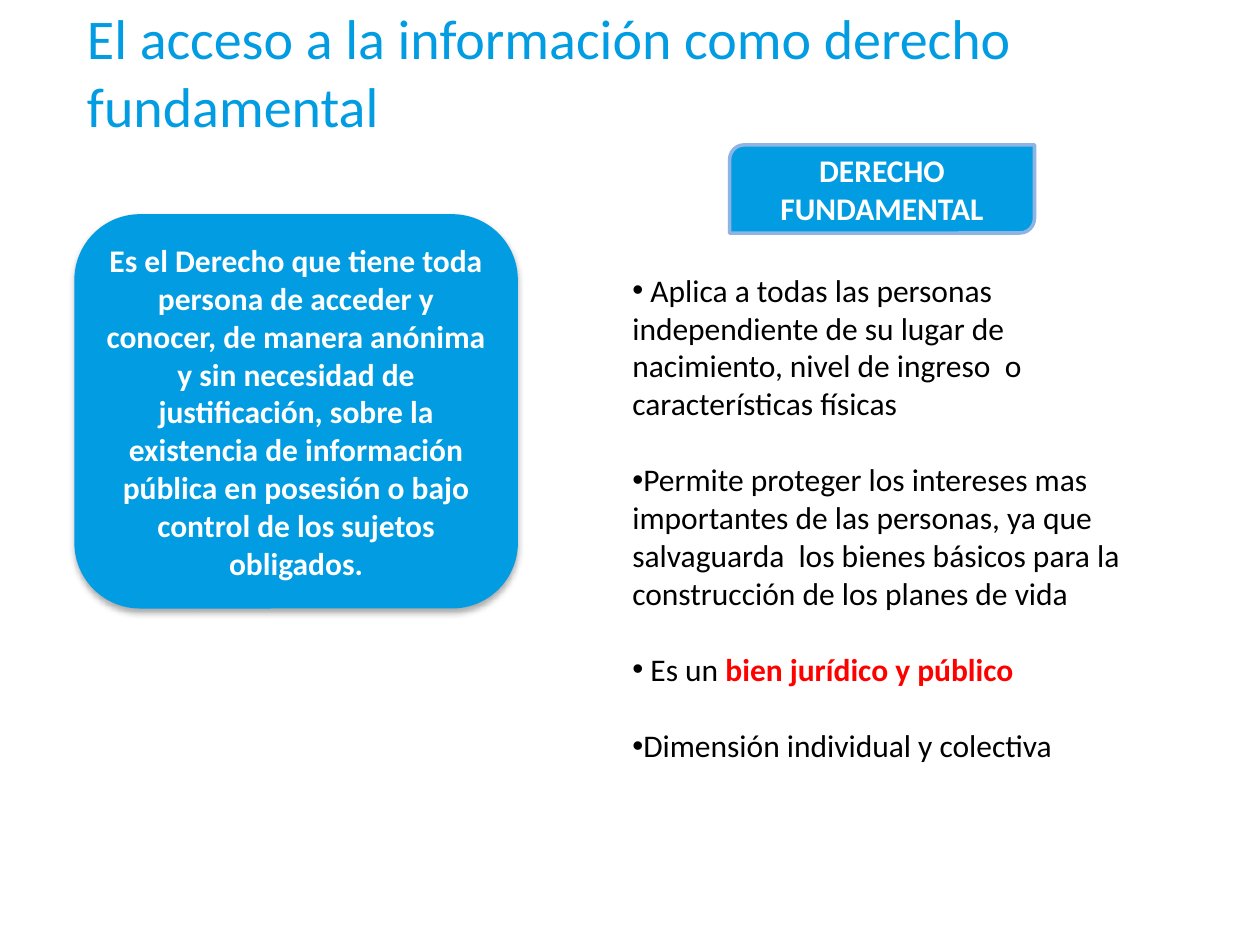
from dataclasses import dataclass

from lxml.etree import SubElement
from pptx import Presentation
from pptx.dml.color import RGBColor
from pptx.enum.shapes import MSO_SHAPE
from pptx.enum.text import MSO_ANCHOR, MSO_AUTO_SIZE, PP_ALIGN
from pptx.oxml.ns import qn
from pptx.util import Inches, Pt


@dataclass(frozen=True)
class Theme:
    """Colours, type and grid of the slide."""
    face: str = "Calibri"
    head: int = 32
    body: int = 18
    gap: int = 22
    blue: str = "019CE1"
    edge: str = "8EB4E3"
    white: str = "FFFFFF"
    black: str = "000000"
    red: str = "FF0000"
    cell: float = 0.1


THEME = Theme()
TITLE = "El acceso a la información como derecho fundamental"
RIGHT = (
    "Es el Derecho que tiene toda persona de acceder y conocer, de manera "
    "anónima y sin necesidad de justificación, sobre la existencia de "
    "información pública en posesión o bajo control de los sujetos obligados."
)
POINTS = (
    (" Aplica a todas las personas independiente de su lugar de nacimiento, "
     "nivel de ingreso  o características físicas", ""),
    ("Permite proteger los intereses mas importantes de las personas, ya que "
     "salvaguarda  los bienes básicos para la construcción de los planes de vida", ""),
    (" Es un ", "bien jurídico y público"),
    ("Dimensión individual y colectiva", ""),
)


def grid(*cells):
    """Turn columns and rows into lengths."""
    return [Inches(n * THEME.cell) for n in cells]


def style(run, size, color, bold=False):
    """Set the type of a run."""
    font = run.font
    font.name, font.size, font.bold = THEME.face, Pt(size), bold
    font.color.rgb = RGBColor.from_string(color)


def add_title(slide, text, *cells):
    """Place and format the title."""
    title = slide.shapes.title
    title.left, title.top, title.width, title.height = grid(*cells)
    frame = title.text_frame
    frame.text = text
    frame.auto_size = MSO_AUTO_SIZE.NONE
    frame.vertical_anchor = MSO_ANCHOR.MIDDLE
    para = frame.paragraphs[0]
    para.alignment = PP_ALIGN.LEFT
    style(para.runs[0], THEME.head, THEME.blue)


def add_panel(slide, kind, text, *cells):
    """Draw a blue panel with bold centred text."""
    panel = slide.shapes.add_shape(kind, *grid(*cells))
    panel.shadow.inherit = False
    panel.fill.solid()
    panel.fill.fore_color.rgb = RGBColor.from_string(THEME.blue)
    panel.line.fill.background()
    frame = panel.text_frame
    frame.text = text
    frame.word_wrap = True
    frame.vertical_anchor = MSO_ANCHOR.MIDDLE
    para = frame.paragraphs[0]
    para.alignment = PP_ALIGN.CENTER
    style(para.runs[0], THEME.body, THEME.white, True)
    return panel


def add_edge(panel):
    """Outline a panel."""
    panel.line.color.rgb = RGBColor.from_string(THEME.edge)
    panel.line.width = Pt(2)


def add_shade(panel):
    """Drop a soft shadow below a panel."""
    effect = panel._element.spPr.find(qn("a:effectLst"))
    shade = SubElement(effect, qn("a:outerShdw"), blurRad=str(Pt(3.5)),
                       dist=str(Pt(2.2)), dir="5400000", rotWithShape="0")
    color = SubElement(shade, qn("a:srgbClr"), val=THEME.black)
    SubElement(color, qn("a:alpha"), val="32000")


def add_points(slide, points, *cells):
    """List the points, with any key phrase in red."""
    frame = slide.shapes.add_textbox(*grid(*cells)).text_frame
    frame.word_wrap = True
    for i, (text, key) in enumerate(points):
        para = frame.add_paragraph() if i else frame.paragraphs[0]
        para.text = text
        if i:
            para.space_before = Pt(THEME.gap)
        props = para._p.get_or_add_pPr()
        SubElement(props, qn("a:buFont"), typeface="Arial")
        SubElement(props, qn("a:buChar"), char="•")
        style(para.runs[0], THEME.body, THEME.black)
        if key:
            run = para.add_run()
            run.text = key
            style(run, THEME.body, THEME.red, True)


def main():
    """Build and save the slide."""
    deck = Presentation()
    deck.slide_width, deck.slide_height = grid(100, 75)
    slide = deck.slides.add_slide(deck.slide_layouts[5])
    add_title(slide, TITLE, 5.9, 2.1, 85, 7.1)
    add_shade(add_panel(slide, MSO_SHAPE.ROUNDED_RECTANGLE, RIGHT,
                        5.9, 17, 35.2, 31.3))
    add_points(slide, POINTS, 49.2, 21, 43.8, 43.4)
    add_edge(add_panel(slide, MSO_SHAPE.ROUND_2_DIAG_RECTANGLE,
                       "DERECHO FUNDAMENTAL", 57.9, 11.5, 24.2, 7))
    deck.save("out.pptx")


if __name__ == "__main__":
    main()
